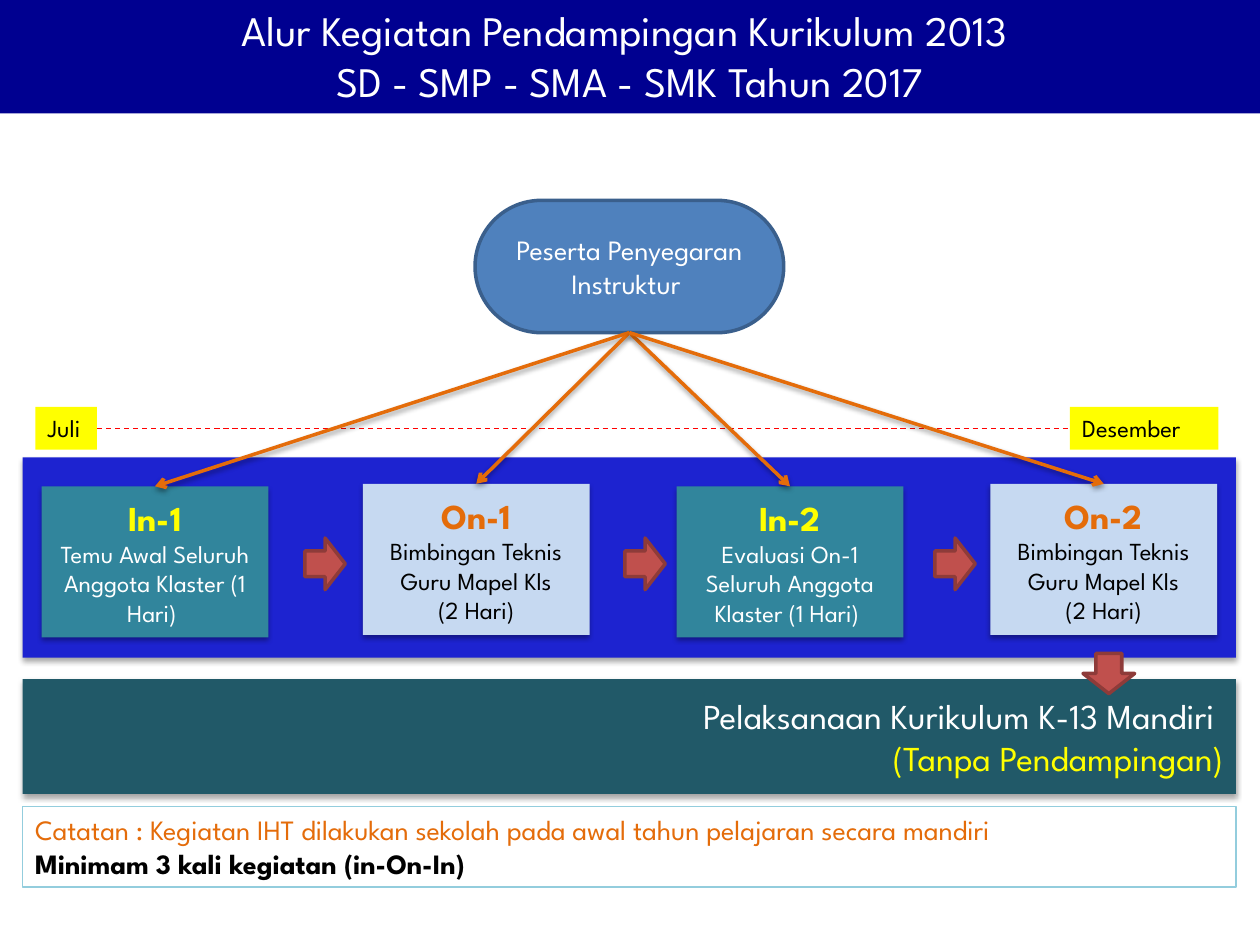
from lxml import etree
from pptx import Presentation
from pptx.dml.color import RGBColor
from pptx.enum.dml import MSO_LINE
from pptx.enum.shapes import MSO_CONNECTOR, MSO_SHAPE
from pptx.enum.text import MSO_ANCHOR, PP_ALIGN
from pptx.oxml.ns import qn
from pptx.util import Inches, Pt

RECT, ROUND, ARROW = MSO_SHAPE.RECTANGLE, MSO_SHAPE.ROUNDED_RECTANGLE, MSO_SHAPE.RIGHT_ARROW
STRAIGHT = MSO_CONNECTOR.STRAIGHT
LEFT, CENTER, RIGHT = PP_ALIGN.LEFT, PP_ALIGN.CENTER, PP_ALIGN.RIGHT
TOP, MIDDLE = MSO_ANCHOR.TOP, MSO_ANCHOR.MIDDLE
FONT = "League Spartan"
WHITE, BLACK, YELLOW, ORANGE = "FFFFFF", "000000", "FFFF00", "E46C0A"
BAND_LEFT, BAND_WIDTH = 0.18, 9.63


def rgb(value):
    return RGBColor.from_string(value)


def add_shadow(sp, alpha=35, dist=1.8):
    effects = etree.SubElement(sp._element.spPr, qn("a:effectLst"))
    shadow = etree.SubElement(effects, qn("a:outerShdw"), blurRad=str(Pt(3.1)),
                              dist=str(Pt(dist)), dir="5400000", rotWithShape="0")
    color = etree.SubElement(shadow, qn("a:srgbClr"), val=BLACK)
    etree.SubElement(color, qn("a:alpha"), val=str(alpha * 1000))


def add_box(s, box, fill=None, line=None, width=2, kind=RECT, shadow=False):
    sp = s.shapes.add_shape(kind, *map(Inches, box))
    if fill:
        sp.fill.solid()
        sp.fill.fore_color.rgb = rgb(fill)
    else:
        sp.fill.background()
    if line:
        sp.line.color.rgb = rgb(line)
        sp.line.width = Pt(width)
    else:
        sp.line.fill.background()
    if shadow:
        add_shadow(sp)
    else:
        sp.shadow.inherit = False
    return sp


def write(sp, lines, align=CENTER, anchor=MIDDLE):
    """Fill a shape with (text, size, colour, bold) paragraphs."""
    tf = sp.text_frame
    tf.word_wrap = True
    tf.vertical_anchor = anchor
    for i, (text, size, color, bold) in enumerate(lines):
        p = tf.add_paragraph() if i else tf.paragraphs[0]
        p.text = text
        p.alignment = align
        p.font.name = FONT
        p.font.size = Pt(size)
        p.font.bold = bold
        p.font.color.rgb = rgb(color)


def add_line(s, start, end, color, width, dash=None, arrow=False):
    line = s.shapes.add_connector(STRAIGHT, *map(Inches, start + end))
    line.line.color.rgb = rgb(color)
    line.line.width = Pt(width)
    if dash:
        line.line.dash_style = dash
    if arrow:
        etree.SubElement(line.line._get_or_add_ln(), qn("a:tailEnd"), type="arrow")
    add_shadow(line, 38, 1.6)


def add_block_arrow(s, left, top, rotation=0):
    sp = add_box(s, (left, top, 0.32, 0.41), "C0504D", "8E3B39", kind=ARROW)
    sp.rotation = rotation


def add_title(s, box):
    write(add_box(s, box, "000090"),
          [("Alur Kegiatan Pendampingan Kurikulum 2013 ", 24, WHITE, False),
           ("SD - SMP - SMA - SMK Tahun 2017", 24, WHITE, False)], anchor=TOP)


def add_stage(s, box, heading, body, is_in):
    fill, accent, color = ("31859C", YELLOW, WHITE) if is_in else ("C6D9F1", ORANGE, BLACK)
    write(add_box(s, box, fill, shadow=True),
          [(heading, 20, accent, True)] + [(text, 14, color, False) for text in body])


def add_stages(s, box):
    """Draw the band of stages and return the top centre of each one."""
    left, top, _, _ = box
    add_box(s, box, "1D23D0", shadow=True)
    on_body = ["Bimbingan Teknis Guru Mapel Kls", "(2 Hari)"]
    stages = [
        (0.15, "In-1", ["Temu Awal Seluruh Anggota Klaster (1 Hari) "]),
        (2.7, "On-1", on_body),
        (5.19, "In-2", ["Evaluasi On-1 Seluruh Anggota Klaster (1 Hari) "]),
        (7.68, "On-2", on_body),
    ]
    tops = []
    for dx, heading, body in stages:
        is_in = heading.startswith("In")
        x, y = left + dx, top + (0.23 if is_in else 0.21)
        add_stage(s, (x, y, 1.8, 1.2), heading, body, is_in)
        tops.append((x + 0.9, y))
    for dx in (2.24, 4.78, 7.24):
        add_block_arrow(s, left + dx, top + 0.64)
    return tops


def add_outcome(s, box):
    left, top, _, _ = box
    write(add_box(s, box, "215968", shadow=True),
          [("Pelaksanaan Kurikulum K-13 Mandiri ", 20, WHITE, False),
           ("(Tanpa Pendampingan)", 20, YELLOW, False)], RIGHT)
    add_block_arrow(s, left + 8.46, top - 0.25, 90)


def add_timeline(s, box):
    left, top, width, height = box
    first, last = 0.49, 1.18
    right = left + width - last
    for x, w, month in ((left, first, "Juli"), (right, last, "Desember")):
        write(add_box(s, (x, top, w, height), YELLOW),
              [(month, 14, BLACK, False)], LEFT, TOP)
    y = top + height / 2
    add_line(s, (left + first, y), (right, y), "FF0000", 0.75, MSO_LINE.DASH)


def add_participants(s, box, targets):
    left, top, width, height = box
    sp = add_box(s, box, "4F81BD", "3A5F8C", kind=ROUND)
    sp.adjustments[0] = 0.5
    write(sp, [("Peserta Penyegaran", 16, WHITE, False), ("Instruktur ", 16, WHITE, False)])
    for target in targets:
        add_line(s, (left + width / 2, top + height), target, ORANGE, 2, arrow=True)


def add_note(s, box):
    write(add_box(s, box, line="93CDDD", width=0.75),
          [("Catatan : Kegiatan IHT dilakukan sekolah pada awal tahun pelajaran secara mandiri",
            16, ORANGE, False),
           ("Minimam 3 kali kegiatan (in-On-In)", 16, BLACK, True)], LEFT, TOP)


def main():
    prs = Presentation()
    prs.slide_width, prs.slide_height = Inches(10), Inches(7.5)
    s = prs.slides.add_slide(prs.slide_layouts[6])
    stage_tops = add_stages(s, (BAND_LEFT, 3.63, BAND_WIDTH, 1.59))
    add_outcome(s, (BAND_LEFT, 5.39, BAND_WIDTH, 0.91))
    add_title(s, (0, -0.01, 10, 0.91))
    add_timeline(s, (0.28, 3.23, 9.39, 0.34))
    add_participants(s, (3.77, 1.59, 2.45, 1.05), stage_tops)
    add_note(s, (BAND_LEFT, 6.4, BAND_WIDTH, 0.64))
    prs.save("out.pptx")


if __name__ == "__main__":
    main()
